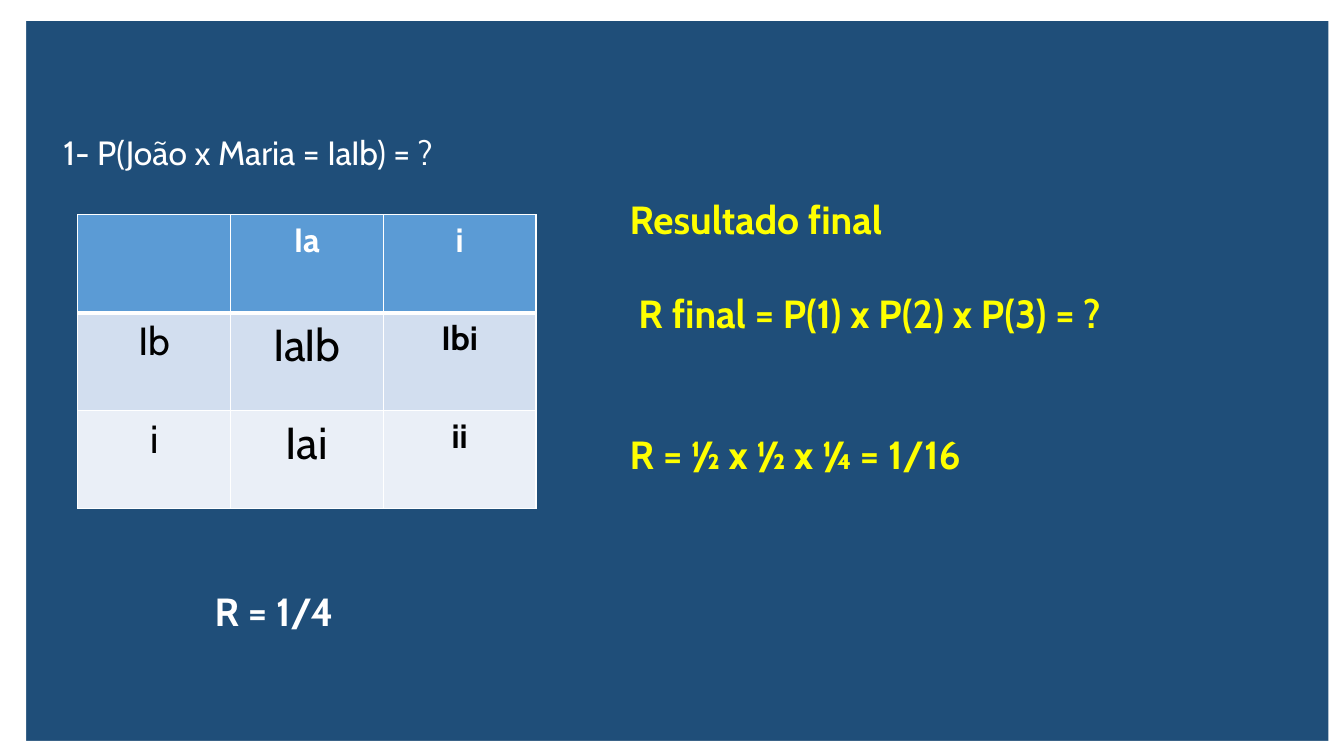
from lxml.etree import SubElement
from pptx import Presentation
from pptx.dml.color import RGBColor
from pptx.enum.shapes import MSO_SHAPE as Shape
from pptx.enum.text import MSO_AUTO_SIZE as AutoSize, PP_ALIGN as Align
from pptx.oxml.ns import qn
from pptx.util import Cm, Pt

WHITE, BLACK, YELLOW, NAVY = "FFFFFF", "000000", "FFFF00", "1F4E79"
ROW_FILLS = ["5B9BD5", "D2DEEF", "EAEFF7"]
WIDTH, HEIGHT = 33.87, 19.05


def paint(fill_or_font, color):
    """Give a fill or a font one solid colour given as a hex string."""
    fill = getattr(fill_or_font, "fill", fill_or_font)
    fill.solid()
    fill.fore_color.rgb = RGBColor.from_string(color)


def write(para, text, size, color, bold):
    para.text = text
    para.font.name = "Cabin"
    para.font.size = Pt(size)
    para.font.bold = bold
    paint(para.font, color)


deck = Presentation()
deck.slide_width, deck.slide_height = Cm(WIDTH), Cm(HEIGHT)
page = deck.slides.add_slide(deck.slide_layouts[6])
paint(page.background.fill, NAVY)

# White frame: top, left, right, bottom
for left, top, width, height in [
    (0, 0, WIDTH, 0.53),
    (0, 0, 0.66, HEIGHT),
    (33.48, 0, 0.39, HEIGHT),
    (0, 18.67, WIDTH, 0.38),
]:
    strip = page.shapes.add_shape(
        Shape.RECTANGLE, Cm(left), Cm(top), Cm(width), Cm(height))
    paint(strip.fill, WHITE)
    strip.line.fill.background()
    strip.shadow.inherit = False

# Each line of text comes with the space before it in points
final_lines = [
    ("Resultado final", 0),
    (" R final = P(1) x P(2) x P(3) = ?", 33.6),
    ("R = ½ x ½ x ¼ = 1/16", 67.2),
]
for left, top, width, height, size, color, bold, lines in [
    (1.35, 3.2, 14.91, 1.27, 24, WHITE, False,
     [("1- P(João x Maria = IaIb) = ?", 0)]),
    (5.16, 14.68, 5.16, 1.45, 28, WHITE, True, [("R = 1/4", 0)]),
    (15.62, 4.8, 16.81, 8.64, 28, YELLOW, True, final_lines),
]:
    box = page.shapes.add_textbox(Cm(left), Cm(top), Cm(width), Cm(height))
    frame = box.text_frame
    frame.word_wrap = True
    frame.auto_size = AutoSize.SHAPE_TO_FIT_TEXT
    for index, (text, gap) in enumerate(lines):
        para = frame.add_paragraph() if index else frame.paragraphs[0]
        write(para, text, size, color, bold)
        para.space_before = Pt(gap)

# Punnett square of João and Maria
genotypes = [["", "Ia", "i"], ["Ib", "IaIb", "Ibi"], ["i", "Iai", "ii"]]
column_sizes = [28, 32, 24]
table = page.shapes.add_table(
    3, 3, Cm(1.96), Cm(5.41), Cm(11.55), Cm(7.41)).table
for r, row in enumerate(genotypes):
    for c, genotype in enumerate(row):
        cell = table.cell(r, c)
        borders = {"lnL": 1, "lnR": 1,
                   "lnT": 3 if r == 1 else 1, "lnB": 3 if r == 0 else 1}
        for side, points in borders.items():
            line = SubElement(cell._tc.get_or_add_tcPr(), qn(f"a:{side}"),
                              w=str(Pt(points)))
            solid = SubElement(line, qn("a:solidFill"))
            SubElement(solid, qn("a:srgbClr"), val=WHITE)
        paint(cell.fill, ROW_FILLS[r])
        if genotype:
            para = cell.text_frame.paragraphs[0]
            size = 24 if r == 0 else column_sizes[c]
            write(para, genotype, size, BLACK if r else WHITE,
                  r == 0 or c == 2)
            para.alignment = Align.CENTER

deck.save("out.pptx")
